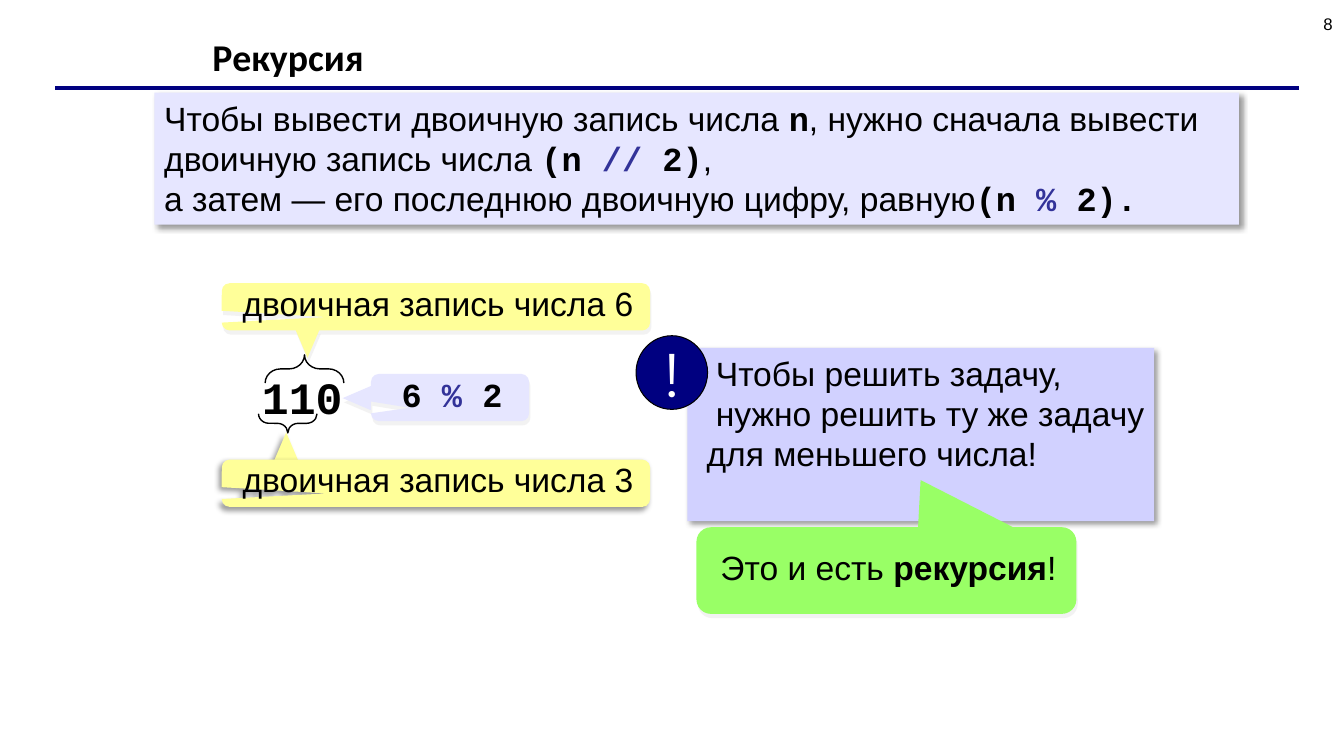
"""Builds the slide on recursion and the binary record of a number."""
from lxml import etree
from pptx import Presentation
from pptx.dml.color import RGBColor
from pptx.enum.shapes import MSO_CONNECTOR, MSO_SHAPE
from pptx.enum.text import MSO_ANCHOR, PP_ALIGN
from pptx.oxml.ns import qn
from pptx.util import Pt

RECT, OVAL = MSO_SHAPE.RECTANGLE, MSO_SHAPE.OVAL
BRACE, WEDGE = MSO_SHAPE.LEFT_BRACE, MSO_SHAPE.ISOSCELES_TRIANGLE
CALL = MSO_SHAPE.ROUNDED_RECTANGULAR_CALLOUT
LINE = MSO_CONNECTOR.STRAIGHT
LEFT, MID, RIGHT = PP_ALIGN.LEFT, PP_ALIGN.CENTER, PP_ALIGN.RIGHT
TOP, CENTER = MSO_ANCHOR.TOP, MSO_ANCHOR.MIDDLE

COLORS = {
    "black": "000000", "white": "FFFFFF", "navy": "000080", "op": "333399",
    "pale": "E6E6FF", "lilac": "D1D1FF", "yellow": "FFFF99",
    "green": "99FF66", "grey": "E7E6E6",
}
STYLES = {
    "plain": ("Arial", False, "black"),
    "bold": ("Arial", True, "black"),
    "code": ("Courier New", True, "black"),
    "op": ("Courier New", True, "op"),
    "title": ("Calibri", True, "black"),
    "mark": ("Montserrat", False, "white"),
}
SOFT = ("grey", 50, 0, 3.2, 72)
DEEP = ("black", 40, 4, 3, 45)
BACK = ("black", 40, 4, 3, 135)


def rgb(name):
    return RGBColor.from_string(COLORS[name])


def write(shape, paras, size=24, align=LEFT, anchor=TOP, space=None,
          wrap=True, inset=(7.2, 3.6, 7.2, 3.6), indents=()):
    frame = shape.text_frame
    frame.word_wrap, frame.vertical_anchor = wrap, anchor
    (frame.margin_left, frame.margin_top,
     frame.margin_right, frame.margin_bottom) = map(Pt, inset)
    for i, runs in enumerate(paras):
        para = frame.paragraphs[0] if i == 0 else frame.add_paragraph()
        para.alignment, para.line_spacing = align, space
        if indents:
            para._p.get_or_add_pPr().set("marL", str(Pt(indents[i])))
        for text, style in runs:
            run = para.add_run()
            run.text = text
            font = run.font
            font.name, font.bold, color = STYLES[style]
            font.size, font.color.rgb = Pt(size), rgb(color)


def shade(shape, color, alpha, blur, dist, angle):
    effects = shape.element.spPr.find(qn("a:effectLst"))
    outer = etree.SubElement(
        effects, qn("a:outerShdw"), blurRad=str(Pt(blur)),
        dist=str(Pt(dist)), dir=str(angle * 60000), algn="ctr",
        rotWithShape="0")
    tint = etree.SubElement(outer, qn("a:srgbClr"), val=COLORS[color])
    etree.SubElement(tint, qn("a:alpha"), val=str(alpha * 1000))


def draw(slide, kind, box, fill=None, line=None, shadow=None, adj=(),
         turn=0, flip=None):
    shape = slide.shapes.add_shape(kind, *map(Pt, box))
    for i, value in enumerate(adj):
        shape.adjustments[i] = value
    if fill:
        shape.fill.solid()
        shape.fill.fore_color.rgb = rgb(fill)
    else:
        shape.fill.background()
    if line:
        shape.line.color.rgb, shape.line.width = rgb("black"), Pt(line)
    else:
        shape.line.fill.background()
    shape.rotation = turn
    if flip:
        shape.element.spPr.find(qn("a:xfrm")).set(flip, "1")
    shape.shadow.inherit = False
    if shadow:
        shade(shape, *shadow)
    return shape


def label(slide, box, runs, **style):
    write(slide.shapes.add_textbox(*map(Pt, box)), [runs], **style)


def bubble(slide, box, fill, runs, shadow=SOFT, adj=(0.255, 0.216, 0.167)):
    shape = draw(slide, CALL, box, fill, shadow=shadow, adj=adj, flip="flipH")
    write(shape, [runs], align=MID, anchor=CENTER, space=0.8,
          inset=(4.3, 3.6, 1.4, 3.6))


def rule(slide, left, right, y):
    line = slide.shapes.add_connector(LINE, Pt(left), Pt(y), Pt(right), Pt(y))
    line.line.color.rgb, line.line.width = rgb("navy"), Pt(3)
    etree.SubElement(line.element.spPr, qn("a:effectLst"))


def header(slide):
    rule(slide, 39.6, 928.1, 62.6)
    label(slide, (144.7, 23.8, 659.5, 37.4), [("Рекурсия", "title")],
          size=27, anchor=CENTER, space=0.9)
    label(slide, (735.1, -1.4, 223.9, 37.4), [("8", "plain")],
          size=12, align=RIGHT, anchor=CENTER)


def task(slide):
    box = draw(slide, RECT, (110.2, 66.2, 774.7, 94.3), "pale", shadow=DEEP)
    write(box, [
        [("Чтобы вывести двоичную запись числа ", "plain"), ("n", "code"),
         (", нужно сначала вывести двоичную запись числа ", "plain"),
         ("(n ", "code"), ("// ", "op"), ("2)", "code"), (",", "plain")],
        [("а затем — его последнюю двоичную цифру, равную", "plain"),
         ("(n ", "code"), ("% ", "op"), ("2).", "code")],
    ])


def digits(slide):
    label(slide, (180, 260.6, 72.7, 46.1), [("110", "code")],
          size=32, wrap=False)
    draw(slide, BRACE, (207.4, 235.4, 20.2, 56.2), line=1,
         adj=(0.541, 0.5), turn=90)
    bubble(slide, (158.4, 202.3, 306, 33.8), "yellow",
           [("двоичная запись числа 6", "plain")])
    draw(slide, WEDGE, (211, 235.4, 17.3, 20.2), "yellow", shadow=SOFT,
         flip="flipV")
    draw(slide, BRACE, (198.7, 281.5, 13.7, 41.8), line=1,
         adj=(0.543, 0.5), turn=270, flip="flipV")
    draw(slide, WEDGE, (195.8, 308.9, 17.3, 20.2), "yellow", shadow=BACK)
    bubble(slide, (158.4, 328.3, 306, 33.8), "yellow",
           [("двоичная запись числа 3", "plain")], shadow=BACK)
    draw(slide, WEDGE, (246.2, 274.3, 17.3, 20.2), "pale", shadow=SOFT,
         turn=90, flip="flipV")
    bubble(slide, (265, 267.1, 113, 33.8), "pale",
           [("6 ", "code"), ("% ", "op"), ("2", "code")])


def moral(slide):
    box = draw(slide, RECT, (491, 248.4, 333.4, 123.8), "lilac", shadow=DEEP)
    lines = ("Чтобы решить задачу,", "нужно решить ту же задачу",
             "для меньшего числа!")
    write(box, [[(line, "plain")] for line in lines],
          inset=(7.2, 3.6, 0, 3.6), indents=(13.3, 13.3, 6.7))
    mark = draw(slide, OVAL, (454.3, 239.8, 51.1, 52.6), "navy", line=0.75)
    write(mark, [[("!", "mark")]], size=44, align=MID, anchor=CENTER,
          wrap=False)
    bubble(slide, (497.5, 376.6, 271.4, 61.9), "green",
           [("Это и есть ", "plain"), ("рекурсия", "bold"), ("!", "plain")],
           adj=(-0.09, -1.044, 0.167))


def main():
    deck = Presentation()
    deck.slide_width, deck.slide_height = Pt(960), Pt(540)
    slide = deck.slides.add_slide(deck.slide_layouts[6])
    header(slide)
    task(slide)
    digits(slide)
    moral(slide)
    deck.save("out.pptx")


if __name__ == "__main__":
    main()
